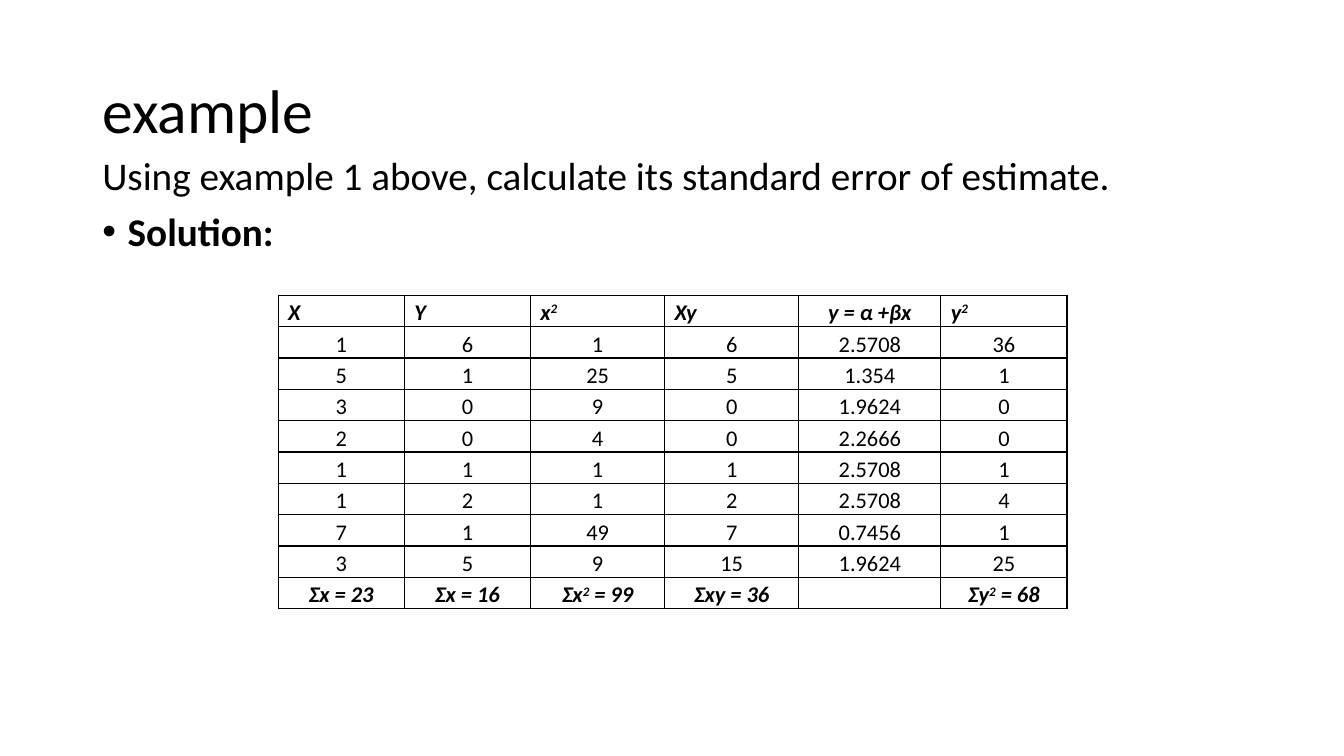
from dataclasses import dataclass

from lxml import etree
from pptx import Presentation
from pptx.dml import color
from pptx.enum import text
from pptx.oxml import ns
from pptx.util import Cm, Pt

# Content: text between two ^ marks is raised
TITLE = "example"
QUESTION = "Using example 1 above, calculate its standard error of estimate."
SOLUTION = "Solution:"
HEADER = ("X", "Y", "x^2^", "Xy", "y = α +βx", "y^2^")
CENTRED_HEADER = "y = α +βx"
DATA = [
    ("1", "6", "1", "6", "2.5708", "36"),
    ("5", "1", "25", "5", "1.354", "1"),
    ("3", "0", "9", "0", "1.9624", "0"),
    ("2", "0", "4", "0", "2.2666", "0"),
    ("1", "1", "1", "1", "2.5708", "1"),
    ("1", "2", "1", "2", "2.5708", "4"),
    ("7", "1", "49", "7", "0.7456", "1"),
    ("3", "5", "9", "15", "1.9624", "25"),
]
TOTALS = ("Σx = 23", "Σx = 16", "Σx^2^ = 99", "Σxy = 36", "", "Σy^2^ = 68")
COLUMN_WIDTHS = (3.18, 3.18, 3.38, 3.38, 3.58, 3.18)
ROW_HEIGHT = 0.79


@dataclass(frozen=True)
class Theme:
    font: str = "Calibri"
    ink: str = "000000"
    title: int = 44
    body: int = 28
    table: int = 16
    border: int = 1


THEME = Theme()


def add_runs(paragraph, content, size, bold=False, italic=False):
    for index, piece in enumerate(content.split("^")):
        if not piece:
            continue
        run = paragraph.add_run()
        run.text = piece
        font = run.font
        font.name, font.size = THEME.font, Pt(size)
        font.bold, font.italic = bold, italic
        font.color.rgb = color.RGBColor.from_string(THEME.ink)
        if index % 2:
            run._r.get_or_add_rPr().set("baseline", "30000")


def add_text_frame(slide, top, height, anchor):
    frame = slide.shapes.add_textbox(Cm(2.33), Cm(top), Cm(29.21), Cm(height)).text_frame
    frame.word_wrap = True
    frame.vertical_anchor = anchor
    return frame


def add_bullet(paragraph):
    properties = paragraph._p.get_or_add_pPr()
    properties.set("marL", str(Cm(0.64)))
    properties.set("indent", str(-Cm(0.64)))
    etree.SubElement(properties, ns.qn("a:buFont")).set("typeface", "Arial")
    etree.SubElement(properties, ns.qn("a:buChar")).set("char", "•")


def add_borders(cell):
    properties = cell._tc.get_or_add_tcPr()
    for index, side in enumerate(("lnL", "lnR", "lnT", "lnB")):
        line = etree.Element(ns.qn(f"a:{side}"), w=str(Pt(THEME.border)))
        fill = etree.SubElement(line, ns.qn("a:solidFill"))
        etree.SubElement(fill, ns.qn("a:srgbClr")).set("val", THEME.ink)
        properties.insert(index, line)


def fill_cell(cell, content, emphasis, alignment, anchor):
    cell.fill.background()
    cell.margin_left = cell.margin_right = Cm(0.25)
    cell.margin_top = cell.margin_bottom = 0
    cell.vertical_anchor = anchor
    paragraph = cell.text_frame.paragraphs[0]
    paragraph.alignment = alignment
    paragraph.line_spacing = 1.15
    paragraph.font.size = Pt(THEME.table)
    add_runs(paragraph, content, THEME.table, emphasis, emphasis)
    add_borders(cell)


def add_heading(slide):
    frame = add_text_frame(slide, 1.01, 3.68, text.MSO_ANCHOR.MIDDLE)
    paragraph = frame.paragraphs[0]
    paragraph.line_spacing = 0.9
    add_runs(paragraph, TITLE, THEME.title)


def add_body(slide):
    frame = add_text_frame(slide, 3.81, 14.63, text.MSO_ANCHOR.TOP)
    question, solution = frame.paragraphs[0], frame.add_paragraph()
    for paragraph in (question, solution):
        paragraph.line_spacing = 0.9
        paragraph.space_before = Pt(10)
    add_runs(question, QUESTION, THEME.body)
    add_bullet(solution)
    add_runs(solution, SOLUTION, THEME.body, bold=True)


def add_sums_table(slide):
    rows = [HEADER, *DATA, TOTALS]
    table = slide.shapes.add_table(
        len(rows), len(HEADER), Cm(7.01), Cm(7.44),
        Cm(sum(COLUMN_WIDTHS)), Cm(ROW_HEIGHT * len(rows))).table
    table.first_row = table.horz_banding = False
    for column, width in zip(table.columns, COLUMN_WIDTHS):
        column.width = Cm(width)
    for row_index, row in enumerate(rows):
        table.rows[row_index].height = Cm(ROW_HEIGHT)
        for column_index, content in enumerate(row):
            left = row is HEADER and content != CENTRED_HEADER
            top = content in (CENTRED_HEADER, "")
            fill_cell(
                table.cell(row_index, column_index), content,
                emphasis=row in (HEADER, TOTALS),
                alignment=text.PP_ALIGN.LEFT if left else text.PP_ALIGN.CENTER,
                anchor=text.MSO_ANCHOR.TOP if top else text.MSO_ANCHOR.BOTTOM)


def main():
    presentation = Presentation()
    presentation.slide_width, presentation.slide_height = Cm(33.87), Cm(19.05)
    slide = presentation.slides.add_slide(presentation.slide_layouts[6])
    add_heading(slide)
    add_body(slide)
    add_sums_table(slide)
    presentation.save("out.pptx")


if __name__ == "__main__":
    main()
